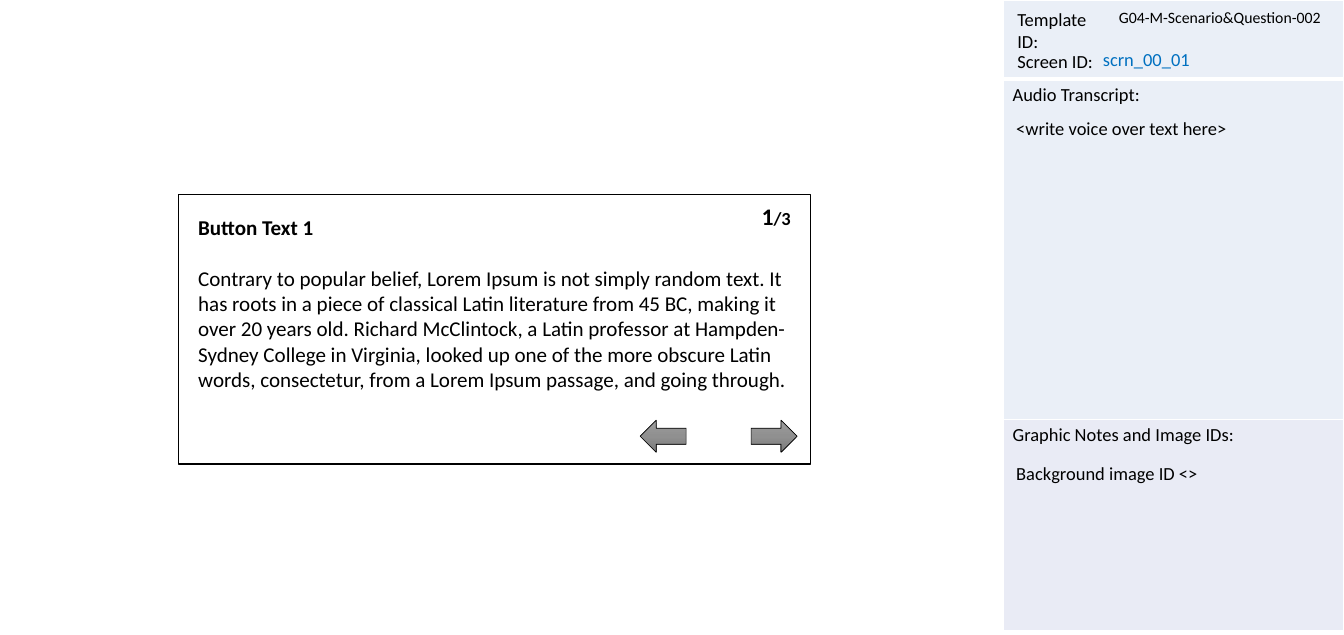
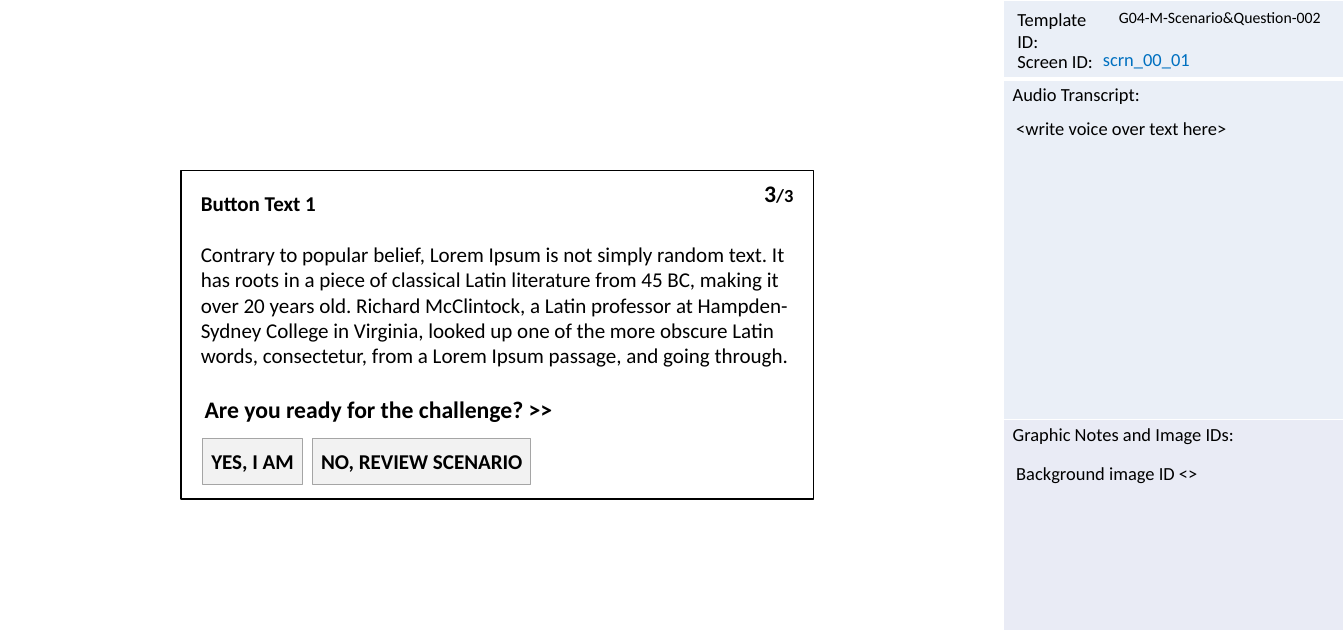
from lxml import etree
from pptx import Presentation
from pptx.dml.color import RGBColor
from pptx.enum.shapes import MSO_SHAPE
from pptx.enum.text import MSO_ANCHOR, MSO_AUTO_SIZE, PP_ALIGN
from pptx.oxml.ns import qn
from pptx.util import Cm, Pt

RECTANGLE = MSO_SHAPE.RECTANGLE
LEFT_ARROW, RIGHT_ARROW = MSO_SHAPE.LEFT_ARROW, MSO_SHAPE.RIGHT_ARROW
TOP, MIDDLE = MSO_ANCHOR.TOP, MSO_ANCHOR.MIDDLE
LEFT, CENTER = PP_ALIGN.LEFT, PP_ALIGN.CENTER
FIT_TEXT = MSO_AUTO_SIZE.SHAPE_TO_FIT_TEXT

FONT = "Calibri"
COLORS = {
    "black": "000000", "white": "FFFFFF", "link": "0070C0",
    "panel": "EAEFF7", "panel_alt": "E9EBF5",
    "button": "F2F2F2", "button_line": "A5A5A5",
}
ARROW_STOPS = [(0, "9D9D9D"), (50, "909090"), (100, "7C7C7C")]

# Side panel: row height, heading, fill
PANEL_LEFT, PANEL_WIDTH = 26.87, 9.12
PANEL_ROWS = [
    (2.11, "", "panel"),
    (9.12, "Audio Transcript:", "panel"),
    (5.66, "Graphic Notes and Image IDs:", "panel_alt"),
]
PANEL_RULES = [1, 3, 1, 1]  # points, from the top edge to the bottom edge

# Side panel text: left, top, width, text, size, colour
PANEL_TEXTS = [
    (27, 1.22, 3, "Screen ID:", 14, "black"),
    (27, 0.1, 3, "Template ID:", 14, "black"),
    (26.97, 3.02, 9.03, "<write voice over text here>", 14, "black"),
    (26.97, 12.24, 9.03, "Background image ID <>", 14, "black"),
    (29.72, 0.08, 6.28, "G04-M-Scenario&Question-002", 12, "black"),
    (29.29, 1.17, 3.91, "scrn_00_01", 14, "link"),
]

CARD_WIDTH, CARD_INSET = 16.94, 0.53
CARD_HEADING = "Button Text 1"
CARD_BODY = (
    "Contrary to popular belief, Lorem Ipsum is not simply random text. "
    "It has roots in a piece of classical Latin literature from 45 BC, "
    "making it over 20 years old. Richard McClintock, a Latin professor at "
    "Hampden-Sydney College in Virginia, looked up one of the more obscure "
    "Latin words, consectetur, from a Lorem Ipsum passage, and going through."
)
# Page number, left, top, height
CARDS = [("1", 4.78, 5.21, 7.21), ("3", 4.85, 4.57, 8.79)]

ARROWS = [(LEFT_ARROW, 17.15), (RIGHT_ARROW, 20.12)]
BUTTONS = [("YES, I AM", 2.67), ("NO, REVIEW SCENARIO", 5.84)]
BUTTON_GAP = 0.28


def add_run(paragraph, text, size, bold=False, color="black"):
    run = paragraph.add_run()
    run.text = text
    run.font.name = FONT
    run.font.size = Pt(size)
    run.font.bold = bold
    run.font.color.rgb = RGBColor.from_string(COLORS[color])


def add_box(slide, preset, left, top, width, height, fill=None, line=None, line_width=1):
    """Add a preset shape, or a plain text box when preset is None."""
    place = Cm(left), Cm(top), Cm(width), Cm(height)
    if preset is None:
        box = slide.shapes.add_textbox(*place)
        box.text_frame.auto_size = FIT_TEXT
    else:
        box = slide.shapes.add_shape(preset, *place)
        box.shadow.inherit = False
        if fill:
            box.fill.solid()
            box.fill.fore_color.rgb = RGBColor.from_string(COLORS[fill])
        box.line.color.rgb = RGBColor.from_string(COLORS[line])
        box.line.width = Pt(line_width)
    box.text_frame.word_wrap = True
    return box


prs = Presentation()
prs.slide_width, prs.slide_height = Cm(36), Cm(17)
blank_layout = prs.slide_layouts[6]
slides = []

# Parts shared by both slides
for page, card_left, card_top, card_height in CARDS:
    slide = prs.slides.add_slide(blank_layout)
    slides.append(slide)

    panel_height = sum(row[0] for row in PANEL_ROWS)
    panel = slide.shapes.add_table(
        len(PANEL_ROWS), 1, Cm(PANEL_LEFT), Cm(0), Cm(PANEL_WIDTH), Cm(panel_height)
    ).table
    panel.first_row = panel.horz_banding = False
    for index, (height, heading, fill) in enumerate(PANEL_ROWS):
        panel.rows[index].height = Cm(height)
        cell = panel.cell(index, 0)
        cell_properties = cell._tc.get_or_add_tcPr()
        edges = [("L", 1), ("R", 1), ("T", PANEL_RULES[index]), ("B", PANEL_RULES[index + 1])]
        for side, points in edges:
            edge = etree.SubElement(cell_properties, qn(f"a:ln{side}"), w=str(Pt(points)))
            edge_fill = etree.SubElement(edge, qn("a:solidFill"))
            etree.SubElement(edge_fill, qn("a:srgbClr"), val=COLORS["white"])
        cell.fill.solid()
        cell.fill.fore_color.rgb = RGBColor.from_string(COLORS[fill])
        if heading:
            add_run(cell.text_frame.paragraphs[0], heading, 14)

    for left, top, width, text, size, color in PANEL_TEXTS:
        label = add_box(slide, None, left, top, width, 0.86)
        add_run(label.text_frame.paragraphs[0], text, size, color=color)

    card = add_box(slide, RECTANGLE, card_left, card_top, CARD_WIDTH, card_height,
                   "white", "black")
    frame = card.text_frame
    frame.vertical_anchor = TOP
    frame.margin_left = frame.margin_right = Cm(CARD_INSET)
    frame.margin_top = frame.margin_bottom = Cm(CARD_INSET)
    heading_line = frame.paragraphs[0]
    heading_line.alignment = LEFT
    heading_line.space_after = Pt(19.5)
    add_run(heading_line, CARD_HEADING, 16, bold=True)
    body = frame.add_paragraph()
    body.alignment = LEFT
    add_run(body, CARD_BODY, 16)

    counter = add_box(slide, None, card_left + 15.37, card_top + 0.08, 1.3, 1.02)
    counter.text_frame.word_wrap = False
    counter_line = counter.text_frame.paragraphs[0]
    add_run(counter_line, page, 18, bold=True)
    add_run(counter_line, "/3", 14, bold=True)

scenario, challenge = slides

# Navigation arrows
for preset, left in ARROWS:
    arrow = add_box(scenario, preset, left, 11.25, 1.23, 0.86, line="black", line_width=0.5)
    arrow.fill.gradient()
    arrow.fill.gradient_angle = 270
    stops = arrow._element.spPr.find(qn("a:gradFill")).find(qn("a:gsLst"))
    stops.clear()
    for percent, color in ARROW_STOPS:
        stop = etree.SubElement(stops, qn("a:gs"), pos=str(percent * 1000))
        etree.SubElement(stop, qn("a:srgbClr"), val=color)

# Question and its answer buttons
button_left = 5.43
for answer, width in BUTTONS:
    button = add_box(challenge, RECTANGLE, button_left, 11.73, width, 1.24,
                     "button", "button_line", 0.5)
    frame = button.text_frame
    frame.vertical_anchor = MIDDLE
    frame.margin_left = frame.margin_right = 0
    frame.paragraphs[0].alignment = CENTER
    add_run(frame.paragraphs[0], answer, 16, bold=True)
    button_left += width + BUTTON_GAP

question = add_box(challenge, None, 5.23, 10.44, 10.08, 1.02)
add_run(question.text_frame.paragraphs[0], "Are you ready for the challenge? >>", 18, bold=True)

prs.save("out.pptx")
